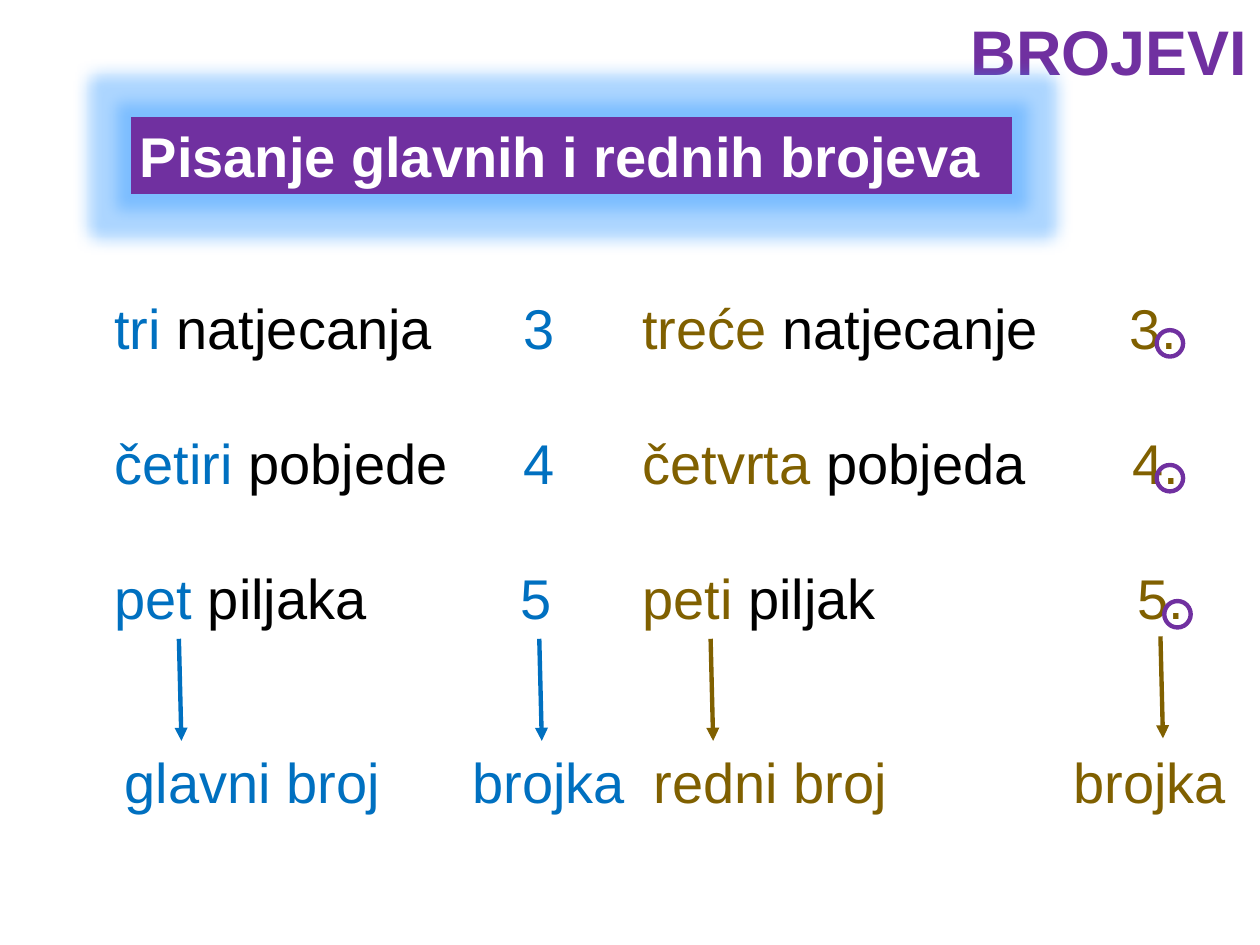
from lxml import etree
from pptx import Presentation
from pptx import util as u
from pptx.dml.color import RGBColor
from pptx.enum import shapes, text
from pptx.oxml import ns

PURPLE = RGBColor(0x70, 0x30, 0xA0)
BLUE = RGBColor(0x00, 0x70, 0xC0)
BROWN = RGBColor(0x80, 0x60, 0x00)
BLACK = RGBColor(0, 0, 0)
WHITE = RGBColor(0xFF, 0xFF, 0xFF)
GLOW = "3399FF"
LINE_HEIGHT = u.Pt(38.5)

# numeral word, noun, figure, tab position of the figure
CARDINALS = [
    ("tri ", "natjecanja", "3", 3.25),
    ("četiri ", "pobjede", "4", 3.25),
    ("pet ", "piljaka", "5", 3.22),
]
ORDINALS = [
    ("treće ", "natjecanje", "3.", 3.87),
    ("četvrta ", "pobjeda", "4.", 3.89),
    ("peti ", "piljak", "5.", 3.93),
]


def style(span, color, size=32, bold=False):
    span.font.name = "Arial"
    span.font.size = u.Pt(size)
    span.font.bold = bold
    span.font.color.rgb = color


def add_child(parent, tag, **attributes):
    return etree.SubElement(parent, ns.qn(tag), attributes)


def add_tab_line(para, spans, tab):
    """Fill a paragraph with (text, color) spans and one left tab stop in inches."""
    para.alignment = text.PP_ALIGN.LEFT
    para.line_spacing = LINE_HEIGHT
    for words, color in spans:
        span = para.add_run()
        span.text = words
        style(span, color)
    stops = add_child(para._p.get_or_add_pPr(), "a:tabLst")
    add_child(stops, "a:tab", pos=str(u.Inches(tab)), algn="l")


def add_box(page, left, top, width, height):
    box = page.shapes.add_textbox(*map(u.Inches, (left, top, width, height)))
    box.text_frame.word_wrap = True
    return box.text_frame


def add_examples(page, left, width, height, rows, color):
    frame = add_box(page, left, 2.28, width, height)
    for index, (numeral, noun, figure, tab) in enumerate(rows):
        para = frame.add_paragraph() if index else frame.paragraphs[0]
        if index:
            para.space_before = LINE_HEIGHT
        add_tab_line(para, [(numeral, color), (noun + "\t", BLACK), (figure, color)], tab)


def add_labels(page, left, width, name, tab, color):
    frame = add_box(page, left, 5.88, width, 0.64)
    add_tab_line(frame.paragraphs[0], [(name + "\tbrojka", color)], tab)


def add_arrow(page, x, y, color):
    arrow = page.shapes.add_connector(
        shapes.MSO_CONNECTOR.STRAIGHT,
        *map(u.Inches, (x, y, x + 0.02, y + 0.81)))
    arrow.line.color.rgb = color
    arrow.line.width = u.Pt(2.5)
    add_child(arrow.line._get_or_add_ln(), "a:tailEnd", type="triangle")
    add_child(arrow._element.spPr, "a:effectLst")


def add_ring(page, left, top):
    ring = page.shapes.add_shape(
        shapes.MSO_SHAPE.OVAL, *map(u.Inches, (left, top, 0.21, 0.21)))
    ring.shadow.inherit = False
    ring.fill.background()
    ring.line.color.rgb = PURPLE
    ring.line.width = u.Pt(2.5)


def add_banner(page):
    banner = page.shapes.add_shape(
        shapes.MSO_SHAPE.RECTANGLE, *map(u.Inches, (1.04, 0.93, 6.99, 0.61)))
    banner.fill.solid()
    banner.fill.fore_color.rgb = PURPLE
    banner.line.fill.background()
    banner.shadow.inherit = False
    effects = banner._element.spPr.find(ns.qn("a:effectLst"))
    glow = add_child(effects, "a:glow", rad=str(u.Pt(18)))
    color = add_child(glow, "a:srgbClr", val=GLOW)
    add_child(color, "a:alpha", val="40000")

    frame = banner.text_frame
    frame.margin_left = frame.margin_right = u.Inches(0.07)
    frame.vertical_anchor = text.MSO_ANCHOR.MIDDLE
    frame.text = "Pisanje glavnih i rednih brojeva"
    para = frame.paragraphs[0]
    para.alignment = text.PP_ALIGN.LEFT
    style(para.runs[0], WHITE, bold=True)


def set_title(page):
    title = page.shapes.title
    title.left, title.top, title.width, title.height = map(
        u.Inches, (2.63, 0, 7.37, 0.76))
    frame = title.text_frame
    frame.text = "BROJEVI"
    frame.vertical_anchor = text.MSO_ANCHOR.BOTTOM
    para = frame.paragraphs[0]
    para.alignment = text.PP_ALIGN.RIGHT
    para.line_spacing = 0.9
    style(para.runs[0], PURPLE, size=36, bold=True)


def main():
    deck = Presentation()
    deck.slide_width, deck.slide_height = u.Inches(10), u.Inches(7.5)
    page = deck.slides.add_slide(deck.slide_layouts[5])
    set_title(page)
    add_banner(page)
    add_labels(page, 0.89, 5.18, "glavni broj", 2.76, BLUE)
    add_examples(page, 0.81, 8.64, 3.33, CARDINALS, BLUE)
    add_examples(page, 5, 5, 2.79, ORDINALS, BROWN)
    add_labels(page, 5.09, 4.82, "redni broj", 3.33, BROWN)
    for x, y, color in [(1.42, 5.07, BLUE), (4.28, 5.07, BLUE),
                        (5.64, 5.07, BROWN), (9.21, 5.05, BROWN)]:
        add_arrow(page, x, y, color)
    for left, top in [(9.18, 2.62), (9.18, 3.69), (9.24, 4.77)]:
        add_ring(page, left, top)
    deck.save("out.pptx")


if __name__ == "__main__":
    main()
